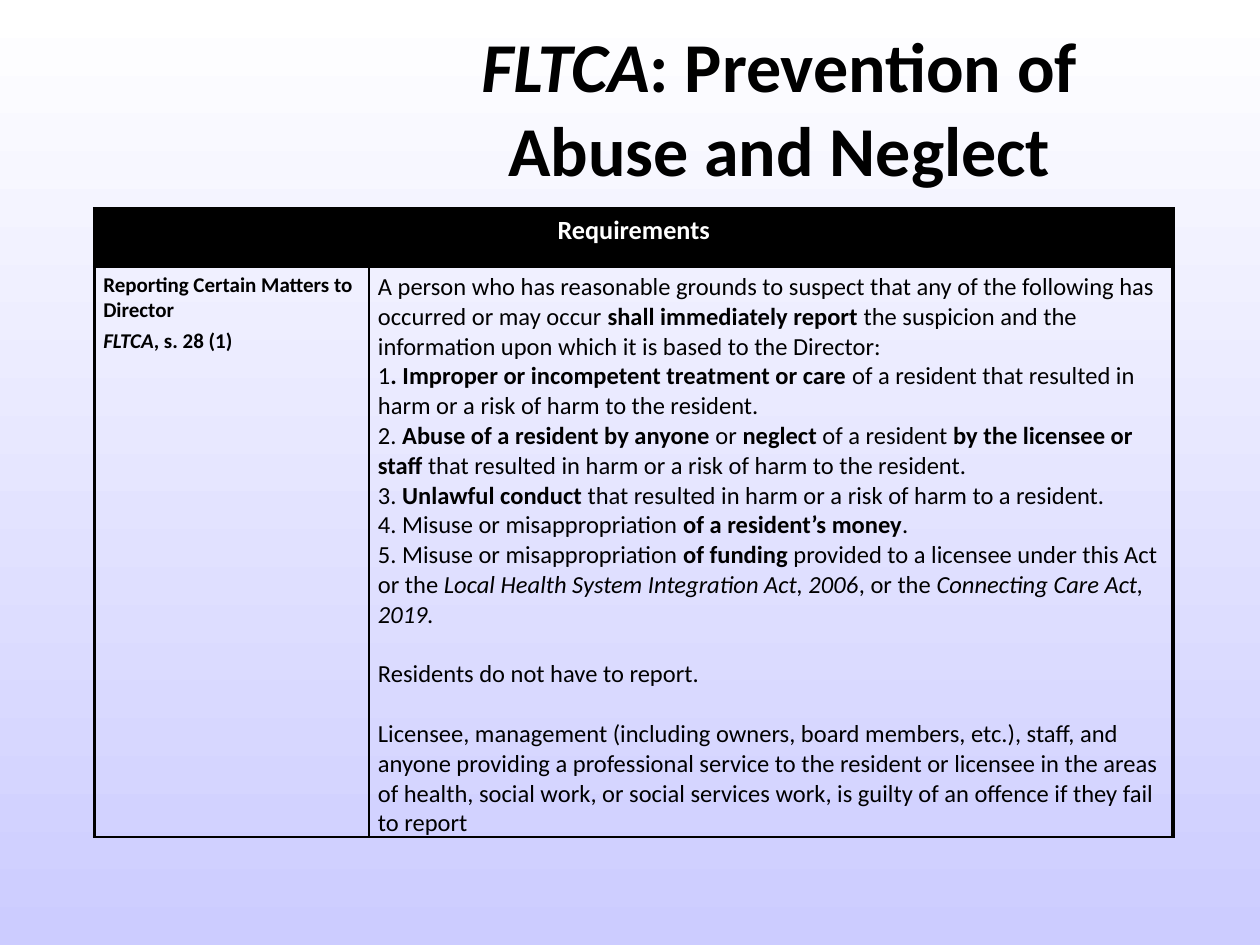
from lxml.etree import SubElement
from pptx import Presentation
from pptx.dml.color import RGBColor
from pptx.enum.text import PP_ALIGN
from pptx.oxml.ns import qn
from pptx.util import Inches, Pt

BLACK = RGBColor(0, 0, 0)
WHITE = RGBColor(255, 255, 255)
LAVENDER = RGBColor(0xCC, 0xCC, 0xFF)
THICK, THIN = Pt(2.25), Pt(1)


def write_text(frame, paragraphs, size, color=BLACK, align=PP_ALIGN.LEFT, after=0, gaps=()):
    """Each paragraph is a list of (text, style); style holds "b" and/or "i".
    Paragraphs whose index is in gaps get one line of space before them."""
    frame.word_wrap = True
    for index, spans in enumerate(paragraphs):
        para = frame.paragraphs[0] if index == 0 else frame.add_paragraph()
        para.alignment = align
        para.space_after = Pt(after)
        if index in gaps:
            para.space_before = Pt(17)
        for text, style in spans:
            span = para.add_run()
            span.text = text
            span.font.name = "Calibri"
            span.font.size = Pt(size)
            span.font.color.rgb = color
            span.font.bold = "b" in style
            span.font.italic = "i" in style


def set_borders(cell, left, right, top, bottom):
    properties = cell._tc.get_or_add_tcPr()
    for side, width in zip("LRTB", (left, right, top, bottom)):
        line = SubElement(properties, qn(f"a:ln{side}"), w=str(int(width)))
        fill = SubElement(line, qn("a:solidFill"))
        SubElement(fill, qn("a:srgbClr"), val=str(BLACK))


deck = Presentation()
deck.slide_width, deck.slide_height = Inches(10), Inches(7.5)
page = deck.slides.add_slide(deck.slide_layouts[6])

# Background: white at the top to lavender at the bottom
background = page.background.fill
background.gradient()
background.gradient_angle = 270
for stop, color, position in zip(background.gradient_stops, (WHITE, LAVENDER), (0, 1)):
    stop.color.rgb = color
    stop.position = position

# Title
title = page.shapes.add_textbox(Inches(3.11), Inches(0.13), Inches(6.15), Inches(1.45))
write_text(title.text_frame, [[("FLTCA", "bi"), (": Prevention of Abuse and Neglect", "b")]],
           size=40, align=PP_ALIGN.CENTER)

# Requirements table
table = page.shapes.add_table(2, 2, Inches(0.75), Inches(1.66), Inches(8.56), Inches(4.97)).table
table.first_row = table.horz_banding = False
for column, width in zip(table.columns, (2.18, 6.38)):
    column.width = Inches(width)
for row, height in zip(table.rows, (0.46, 4.51)):
    row.height = Inches(height)

header, section, details = table.cell(0, 0), table.cell(1, 0), table.cell(1, 1)
header.merge(table.cell(0, 1))
set_borders(header, THICK, THICK, THICK, THIN)
set_borders(table.cell(0, 1), THICK, THICK, THICK, THIN)
set_borders(section, THICK, THIN, THIN, THIN)
set_borders(details, THIN, THICK, THIN, THIN)
for cell in (header, section, details):
    cell.margin_left = cell.margin_right = Inches(0.07)
    cell.margin_top = cell.margin_bottom = Inches(0.04)
    cell.fill.background()
header.fill.solid()
header.fill.fore_color.rgb = BLACK

write_text(header.text_frame, [[("Requirements", "b")]],
           size=15, color=WHITE, align=PP_ALIGN.CENTER, after=4)

write_text(section.text_frame, [
    [("Reporting Certain Matters to Director", "b")],
    [("FLTCA", "bi"), (", s. 28 (1)", "b")],
], size=12, after=3)

write_text(details.text_frame, [
    [("A person who has reasonable grounds to suspect that any of the following has "
      "occurred or may occur ", ""),
     ("shall immediately report ", "b"),
     ("the suspicion and the information upon which it is based to the Director:", "")],
    [("1", ""), (". Improper or incompetent treatment or care ", "b"),
     ("of a resident that resulted in harm or a risk of harm to the resident.", "")],
    [("2. ", ""), ("Abuse of a resident by anyone ", "b"), ("or ", ""), ("neglect ", "b"),
     ("of a resident ", ""), ("by the licensee or staff", "b"),
     (" that resulted in harm or a risk of harm to the resident.", "")],
    [("3. ", ""), ("Unlawful conduct ", "b"),
     ("that resulted in harm or a risk of harm to a resident.", "")],
    [("4. Misuse or misappropriation ", ""), ("of a resident’s money", "b"), (".", "")],
    [("5. Misuse or misappropriation ", ""), ("of funding ", "b"),
     ("provided to a licensee under this Act or the ", ""),
     ("Local Health System Integration Act, 2006", "i"), (", or the ", ""),
     ("Connecting Care Act, 2019.", "i")],
    [("Residents do not have to report.", "")],
    [("Licensee, management (including owners, board members, etc.), staff, and anyone "
      "providing a professional service to the resident or licensee in the areas of health, "
      "social work, or social services work, is guilty of an offence if they fail to report", "")],
], size=14, gaps=(6, 7))

deck.save("out.pptx")
